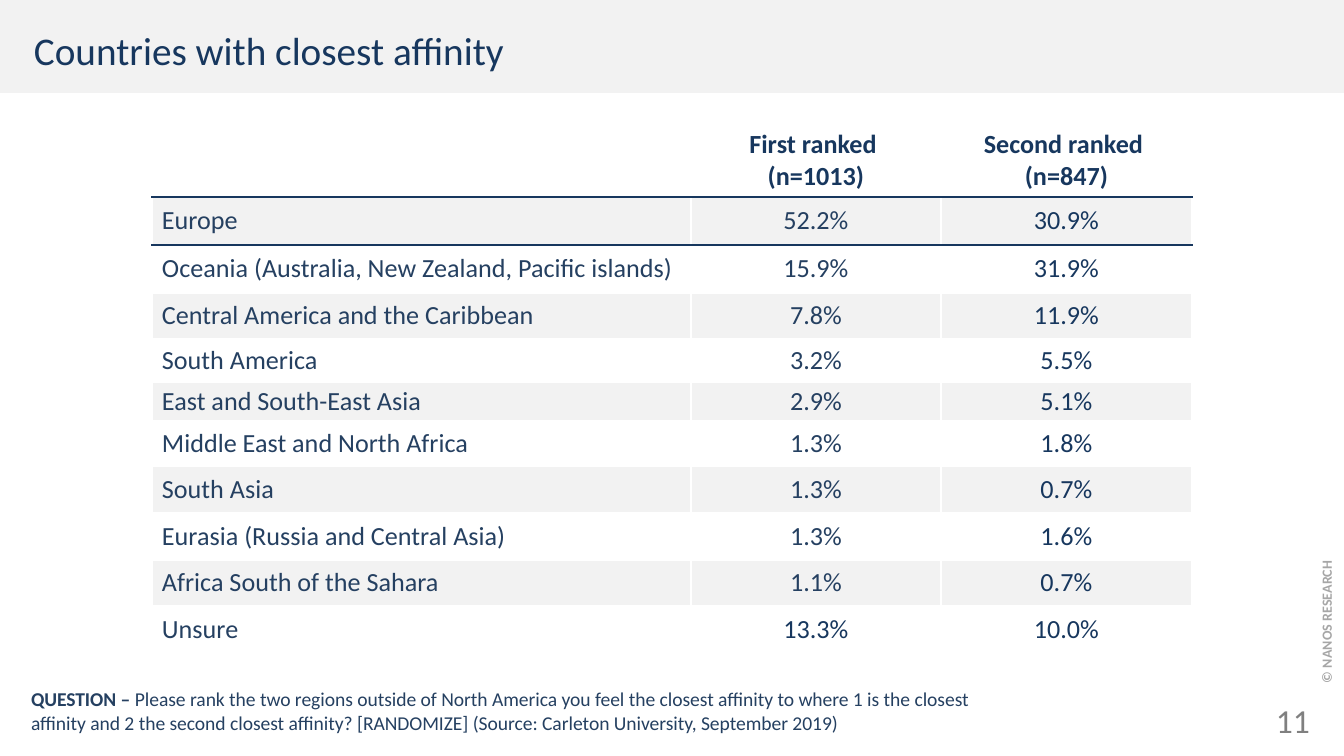
"""Build a slide with a table of the regions ranked closest in affinity."""
from lxml import etree
from pptx import Presentation
from pptx.dml.color import RGBColor
from pptx.enum.shapes import MSO_SHAPE
from pptx.enum.text import MSO_ANCHOR, PP_ALIGN
from pptx.oxml.ns import qn
from pptx.util import Pt

PX = 914400 / 134.4
RECT = MSO_SHAPE.RECTANGLE
TOP, MID = MSO_ANCHOR.TOP, MSO_ANCHOR.MIDDLE
LEFT, MIDDLE, RIGHT = PP_ALIGN.LEFT, PP_ALIGN.CENTER, PP_ALIGN.RIGHT
HUES = {"navy": "17375E", "blue": "254061", "band": "F2F2F2",
        "white": "FFFFFF", "grey": "808080", "pale": "A6A6A6"}


def style(par, size, hue, bold=False, align=LEFT):
    par.alignment = align
    for run in par.runs:
        font = run.font
        font.name, font.size, font.bold = "Calibri", Pt(size), bold
        font.color.rgb = RGBColor.from_string(HUES[hue])


def label(text, area, pads, size, hue, bold=False, align=LEFT, anchor=MID):
    box = slide.shapes.add_textbox(*[round(n * PX) for n in area])
    frame = box.text_frame
    frame.word_wrap = True
    frame.vertical_anchor = anchor
    frame.margin_left = frame.margin_right = round(pads[0] * PX)
    frame.margin_top = frame.margin_bottom = round(pads[1] * PX)
    frame.text = text
    style(frame.paragraphs[0], size, hue, bold, align)
    return frame


deck = Presentation()
deck.slide_width, deck.slide_height = round(1344 * PX), round(756 * PX)
slide = deck.slides.add_slide(deck.slide_layouts[6])

bar = slide.shapes.add_shape(RECT, 0, 0, deck.slide_width, round(93 * PX))
bar.shadow.inherit = False
bar.fill.solid()
bar.fill.fore_color.rgb = RGBColor.from_string(HUES["band"])
bar.line.fill.background()

label("Countries with closest affinity", (24, 3, 587, 93), (10, 5), 21, "navy")
mark = label("© NANOS RESEARCH", (1305, 538, 44, 152), (13, 7), 7.5, "pale",
             bold=True, anchor=TOP)
mark._txBody.bodyPr.set("vert", "vert270")

rows = [
    ("", "First ranked \n(n=1013)", "Second ranked \n(n=847)"),
    ("Europe", "52.2%", "30.9%"),
    ("Oceania (Australia, New Zealand, Pacific islands)", "15.9%", "31.9%"),
    ("Central America and the Caribbean", "7.8%", "11.9%"),
    ("South America", "3.2%", "5.5%"),
    ("East and South-East Asia", "2.9%", "5.1%"),
    ("Middle East and North Africa", "1.3%", "1.8%"),
    ("South Asia", "1.3%", "0.7%"),
    ("Eurasia (Russia and Central Asia)", "1.3%", "1.6%"),
    ("Africa South of the Sahara", "1.1%", "0.7%"),
    ("Unsure", "13.3%", "10.0%"),
]
wide = [539, 250, 251]
tall = [73, 48, 48, 46, 43, 39, 45, 47, 47, 46, 48]
area = [round(n * PX) for n in (152, 124, sum(wide), sum(tall))]
table = slide.shapes.add_table(len(rows), len(wide), *area).table
table.first_row = table.horz_banding = False
for col, size in zip(table.columns, wide):
    col.width = round(size * PX)

for r, texts in enumerate(rows):
    table.rows[r].height = round(tall[r] * PX)
    for c, text in enumerate(texts):
        cell = table.cell(r, c)
        cell.vertical_anchor = MID
        cell.margin_left = round((10 if c == 0 else 1) * PX)
        cell.margin_right = round(PX)
        cell.margin_top = cell.margin_bottom = round((5 if r == 0 else 1) * PX)
        cell.fill.solid()
        fill = "band" if r % 2 else "white"
        cell.fill.fore_color.rgb = RGBColor.from_string(HUES[fill])
        cell.text_frame.text = text
        hue = "navy" if r in (0, len(rows) - 1) and c or c == 2 else "blue"
        for par in cell.text_frame.paragraphs:
            style(par, 14, hue, r == 0, MIDDLE if c else LEFT)
        props = cell._tc.get_or_add_tcPr()
        for i, side in enumerate("LRTB"):
            dark = (side == "T" and r in (1, 2)) or (side == "B" and r in (0, 1))
            line = etree.Element(qn("a:ln" + side), w=str(Pt(1.5 if dark else 1)))
            paint = etree.SubElement(line, qn("a:solidFill"))
            etree.SubElement(paint, qn("a:srgbClr"),
                             val=HUES["navy" if dark else "white"])
            props.insert(i, line)

note = label("QUESTION – ", (24, 683, 982, 55), (7, 4), 10.5, "blue", anchor=TOP)
par = note.paragraphs[0]
par.add_run().text = (
    "Please rank the two regions outside of North America you feel the closest "
    "affinity to where 1 is the closest affinity and 2 the second closest "
    "affinity? [RANDOMIZE] (Source: Carleton University, September 2019)")
style(par, 10.5, "blue")
par.runs[0].font.bold = True

label("11", (1262, 702, 58, 37), (10, 5), 18, "grey", align=RIGHT)

deck.save("out.pptx")
